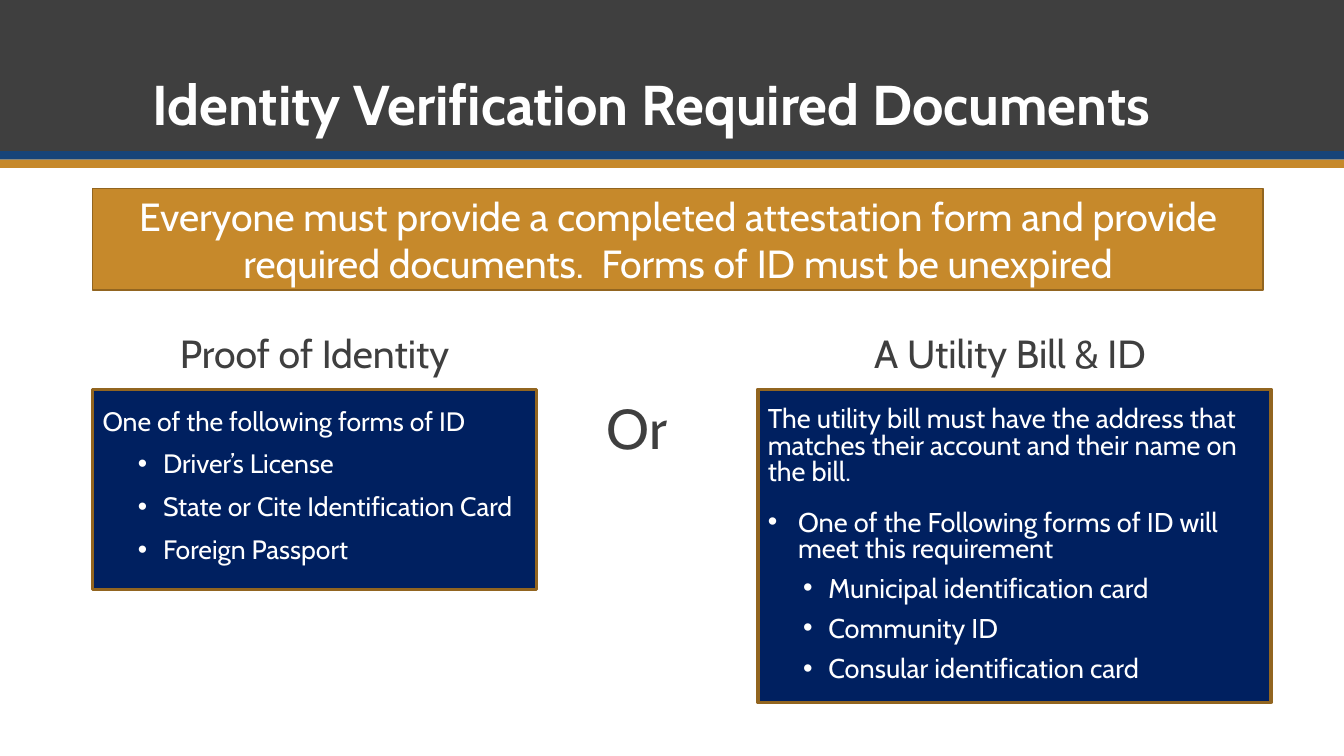
from dataclasses import dataclass

from lxml import etree
from pptx import Presentation
from pptx.dml.color import RGBColor
from pptx.enum.shapes import MSO_SHAPE
from pptx.enum.text import MSO_ANCHOR, PP_ALIGN
from pptx.oxml.ns import qn
from pptx.util import Pt

RECTANGLE = MSO_SHAPE.RECTANGLE
LEFT, CENTER = PP_ALIGN.LEFT, PP_ALIGN.CENTER
TOP, MIDDLE, BOTTOM = MSO_ANCHOR.TOP, MSO_ANCHOR.MIDDLE, MSO_ANCHOR.BOTTOM


@dataclass(frozen=True)
class Theme:
    font: str = "Cabin"
    white: RGBColor = RGBColor(0xFF, 0xFF, 0xFF)
    charcoal: RGBColor = RGBColor(0x3F, 0x3F, 0x3F)
    blue: RGBColor = RGBColor(0x17, 0x44, 0x79)
    navy: RGBColor = RGBColor(0x00, 0x20, 0x60)
    gold: RGBColor = RGBColor(0xC6, 0x89, 0x2B)
    bronze: RGBColor = RGBColor(0x92, 0x65, 0x20)
    display: float = 40
    heading: float = 28
    left_body: float = 19
    right_body: float = 19.4


THEME = Theme()
WIDTH, HEIGHT = 960, 540
LEFT_X, RIGHT_X = 66.2, 541.4
LEFT_WIDTH, RIGHT_WIDTH = 316.8, 360
HEADING_TOP, PANEL_TOP, LIST_TOP = 230.4, 277.9, 288
HEADING_HEIGHT = PANEL_TOP - HEADING_TOP

INDENTS = {"plain": None, "bullet": (21.6, -21.6), "sub": (43.2, -18)}
SPACE_BEFORE = {"plain": 18, "bullet": 18, "sub": 10}

LEFT_LIST = [
    ("plain", "One of the following forms of ID"),
    ("sub", "Driver’s License"),
    ("sub", "State or Cite Identification Card"),
    ("sub", "Foreign Passport"),
]
RIGHT_LIST = [
    ("plain", "The utility bill must have the address that matches "
              "their account and their name on the bill."),
    ("bullet", "One of the Following forms of ID will meet this requirement"),
    ("sub", "Municipal identification card"),
    ("sub", "Community ID"),
    ("sub", "Consular identification card"),
]


def add_block(page, x, y, width, height, fill, line_width=0):
    block = page.shapes.add_shape(RECTANGLE, Pt(x), Pt(y), Pt(width), Pt(height))
    block.shadow.inherit = False
    block.fill.solid()
    block.fill.fore_color.rgb = fill
    if line_width:
        block.line.color.rgb = THEME.bronze
        block.line.width = Pt(line_width)
    else:
        block.line.fill.background()
    return block


def add_bullet(para, margin, indent):
    properties = para._p.get_or_add_pPr()
    properties.set("marL", str(Pt(margin)))
    properties.set("indent", str(Pt(indent)))
    etree.SubElement(properties, qn("a:buFont")).set("typeface", "Arial")
    etree.SubElement(properties, qn("a:buChar")).set("char", "•")


def style(para, size, color, align=LEFT, spacing=1.0, bold=False):
    para.alignment = align
    para.line_spacing = spacing
    para.font.name = THEME.font
    para.font.size = Pt(size)
    para.font.color.rgb = color
    para.font.bold = bold


def write(box, text, size, color, anchor=TOP, **look):
    frame = box.text_frame
    frame.word_wrap = True
    frame.vertical_anchor = anchor
    para = frame.paragraphs[0]
    para.text = text
    style(para, size, color, **look)


def add_text(page, x, y, width, height, text, size, color, **look):
    box = page.shapes.add_textbox(Pt(x), Pt(y), Pt(width), Pt(height))
    write(box, text, size, color, **look)


def add_list(page, x, y, width, height, items, size, spacing):
    box = page.shapes.add_textbox(Pt(x), Pt(y), Pt(width), Pt(height))
    frame = box.text_frame
    frame.word_wrap = True
    for index, (kind, text) in enumerate(items):
        para = frame.add_paragraph() if index else frame.paragraphs[0]
        para.text = text
        if INDENTS[kind]:
            add_bullet(para, *INDENTS[kind])
        if kind == "sub":
            para.level = 1
        if index:
            para.space_before = Pt(SPACE_BEFORE[kind])
        style(para, size, THEME.white, spacing=spacing)


def add_header(page):
    add_block(page, 0, 0, WIDTH, 108, THEME.charcoal)
    add_block(page, 0, 108, WIDTH, 6, THEME.blue)
    add_block(page, 0, 114, WIDTH, 6, THEME.gold)
    add_text(page, 102, 20.2, 756, 81.4, "Identity Verification Required Documents",
             THEME.display, THEME.white, anchor=BOTTOM, spacing=0.9, bold=True)


def add_heading(page, x, width, text):
    add_text(page, x, HEADING_TOP, width, HEADING_HEIGHT, text, THEME.heading,
             THEME.charcoal, anchor=MIDDLE, align=CENTER, spacing=0.9)


def main():
    deck = Presentation()
    deck.slide_width, deck.slide_height = Pt(WIDTH), Pt(HEIGHT)
    page = deck.slides.add_slide(deck.slide_layouts[6])

    add_header(page)
    add_block(page, RIGHT_X, PANEL_TOP, 366.5, 223.9, THEME.navy, 2.25)
    add_block(page, LEFT_X, PANEL_TOP, LEFT_WIDTH, 143.3, THEME.navy, 2.25)

    add_heading(page, LEFT_X, LEFT_WIDTH, "Proof of Identity")
    add_list(page, LEFT_X, LIST_TOP, LEFT_WIDTH, 195.1, LEFT_LIST,
             THEME.left_body, 0.9)
    add_heading(page, RIGHT_X, RIGHT_WIDTH, "A Utility Bill & ID")
    add_list(page, RIGHT_X, LIST_TOP, RIGHT_WIDTH, 213.8, RIGHT_LIST,
             THEME.right_body, 0.8)

    banner = add_block(page, LEFT_X, 134.6, 835.9, 72.7, THEME.gold, 1)
    write(banner, "Everyone must provide a completed attestation form and provide "
                  "required documents.  Forms of ID must be unexpired",
          THEME.heading, THEME.white, anchor=MIDDLE, align=CENTER)
    add_text(page, 426.2, PANEL_TOP, 72, 55.4, "Or", THEME.display, THEME.charcoal)

    deck.save("out.pptx")


if __name__ == "__main__":
    main()
